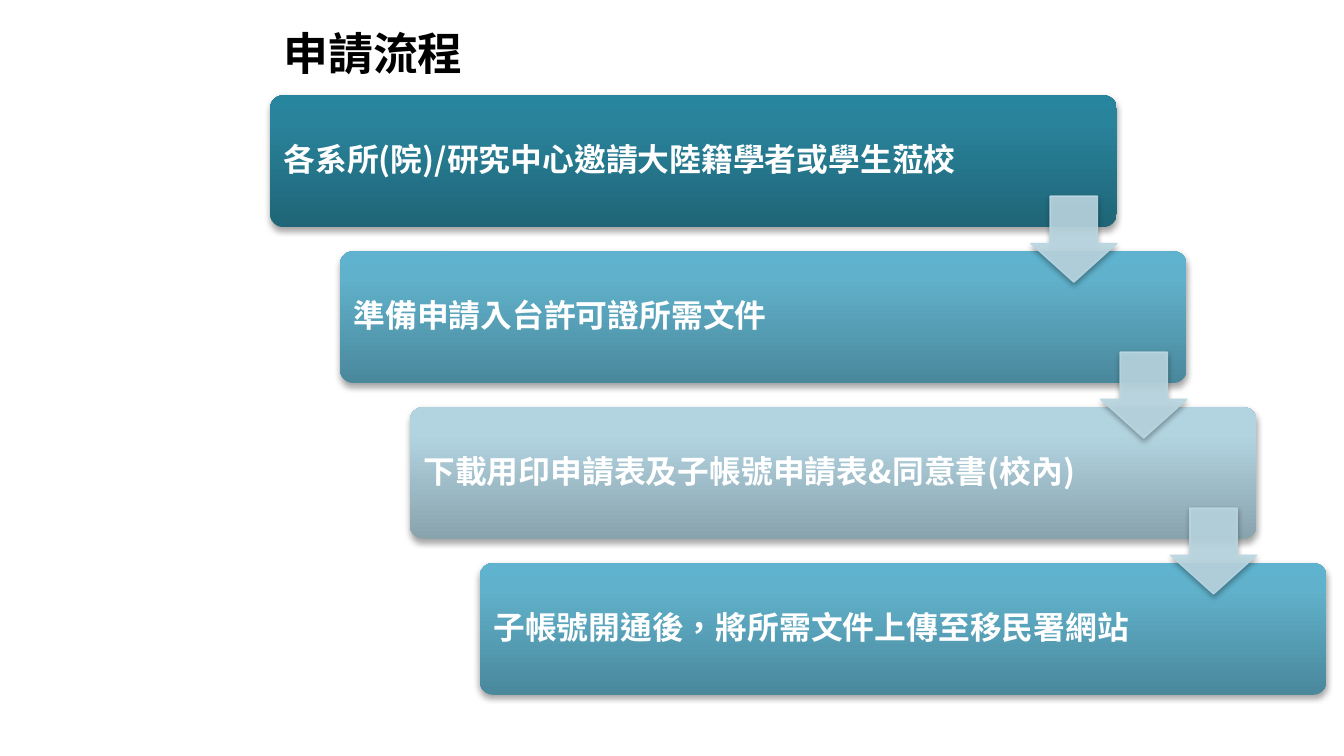
from dataclasses import dataclass

from lxml.etree import SubElement
from pptx import Presentation
from pptx.dml.color import RGBColor
from pptx.enum.lang import MSO_LANGUAGE_ID
from pptx.enum.shapes import MSO_SHAPE
from pptx.enum.text import MSO_ANCHOR, MSO_AUTO_SIZE, PP_ALIGN
from pptx.oxml import parse_xml
from pptx.oxml.ns import nsdecls, qn
from pptx.shapes.autoshape import Shape
from pptx.slide import Slide
from pptx.text.text import TextFrame
from pptx.util import Inches, Pt


@dataclass(frozen=True)
class Theme:
    font: str = "Noto Sans CJK SC"
    title_size: float = 24
    step_size: float = 17
    title_color: str = "000000"
    step_color: str = "FFFFFF"
    arrow_color: str = "BAD7E2"
    arrow_opacity: int = 90
    shadow_color: str = "000000"
    shadow_opacity: int = 35
    dark: tuple[str, str, str] = ("1F6577", "29839B", "27859E")
    medium: tuple[str, str, str] = ("4A889C", "60B1CB", "5FB3CE")
    light: tuple[str, str, str] = ("89A3AD", "B2D4E1", "B2D5E3")


@dataclass(frozen=True)
class Step:
    text: str
    gradient: tuple[str, str, str]
    text_width: float = 5.08


THEME = Theme()
STEPS = [
    Step("各系所(院)/研究中心邀請大陸籍學者或學生蒞校", THEME.dark, 5.16),
    Step("準備申請入台許可證所需文件", THEME.medium),
    Step("下載用印申請表及子帳號申請表&同意書(校內)", THEME.light),
    Step("子帳號開通後，將所需文件上傳至移民署網站", THEME.medium),
]
GRADIENT_POSITIONS = (0, 80, 100)
SLIDE_WIDTH = 10
SLIDE_HEIGHT = SLIDE_WIDTH * 9 / 16
FIRST_LEFT, FIRST_TOP = 2.01, 0.71
STEP_RIGHT, STEP_DOWN = 0.52, 1.16
CARD_WIDTH, CARD_HEIGHT = 6.3, 0.98
TEXT_INSET, TEXT_MARGIN = 0.03, 0.07
ARROW_SIZE, ARROW_DROP = 0.64, 0.75


def write_text(frame: TextFrame, text: str, size: float, color: str) -> None:
    frame.word_wrap = True
    frame.auto_size = MSO_AUTO_SIZE.NONE
    frame.vertical_anchor = MSO_ANCHOR.MIDDLE
    frame.text = text
    para = frame.paragraphs[0]
    para.alignment = PP_ALIGN.LEFT
    para.font.name = THEME.font
    para.font.size = Pt(size)
    para.font.bold = True
    para.font.color.rgb = RGBColor.from_string(color)
    defaults = para._p.pPr.find(qn("a:defRPr"))
    SubElement(defaults, qn("a:ea"), typeface=THEME.font)
    for span in para.runs:
        span.font.language_id = MSO_LANGUAGE_ID.TRADITIONAL_CHINESE


def add_shadow(shape: Shape) -> None:
    shape.shadow.inherit = False
    effects = shape._element.spPr.find(qn("a:effectLst"))
    effects.append(parse_xml(
        f'<a:outerShdw {nsdecls("a")} blurRad="{Pt(3.1)}" dist="{Pt(1.8)}" '
        f'dir="5400000" rotWithShape="0"><a:srgbClr val="{THEME.shadow_color}">'
        f'<a:alpha val="{THEME.shadow_opacity * 1000}"/></a:srgbClr></a:outerShdw>'
    ))


def fill_gradient(shape: Shape, colors: tuple[str, str, str]) -> None:
    shape.fill.gradient()
    gradient = shape._element.spPr.find(qn("a:gradFill"))
    stops = gradient.find(qn("a:gsLst"))
    for stop in list(stops):
        stops.remove(stop)
    for position, color in zip(GRADIENT_POSITIONS, colors):
        stop = SubElement(stops, qn("a:gs"), pos=str(position * 1000))
        SubElement(stop, qn("a:srgbClr"), val=color)
    gradient.find(qn("a:lin")).set("ang", "16200000")


def add_card(page: Slide, step: Step, left: float, top: float) -> None:
    card = page.shapes.add_shape(
        MSO_SHAPE.ROUNDED_RECTANGLE,
        Inches(left), Inches(top), Inches(CARD_WIDTH), Inches(CARD_HEIGHT),
    )
    card.adjustments[0] = 0.1
    fill_gradient(card, step.gradient)
    card.line.fill.background()
    add_shadow(card)

    box = page.shapes.add_textbox(
        Inches(left + TEXT_INSET), Inches(top + TEXT_INSET),
        Inches(step.text_width), Inches(CARD_HEIGHT - 2 * TEXT_INSET),
    )
    frame = box.text_frame
    frame.margin_left = frame.margin_right = Inches(TEXT_MARGIN)
    frame.margin_top = frame.margin_bottom = Inches(TEXT_MARGIN)
    write_text(frame, step.text, THEME.step_size, THEME.step_color)
    frame.paragraphs[0].line_spacing = 0.9


def add_arrow(page: Slide, left: float, top: float) -> None:
    arrow = page.shapes.add_shape(
        MSO_SHAPE.DOWN_ARROW,
        Inches(left), Inches(top), Inches(ARROW_SIZE), Inches(ARROW_SIZE),
    )
    arrow.adjustments[0] = 0.55
    arrow.adjustments[1] = 0.45
    arrow.fill.solid()
    arrow.line.width = Pt(0.75)
    for color in (arrow.fill.fore_color, arrow.line.color):
        color.rgb = RGBColor.from_string(THEME.arrow_color)
    for node in list(arrow._element.spPr.iter(qn("a:srgbClr"))):
        SubElement(node, qn("a:alpha"), val=str(THEME.arrow_opacity * 1000))
    add_shadow(arrow)


def main() -> None:
    deck = Presentation()
    deck.slide_width, deck.slide_height = Inches(SLIDE_WIDTH), Inches(SLIDE_HEIGHT)
    page = deck.slides.add_slide(deck.slide_layouts[5])

    title = page.shapes.title
    title.left, title.top = Inches(FIRST_LEFT), Inches(0.14)
    title.width, title.height = Inches(7.95), Inches(0.5)
    write_text(title.text_frame, "申請流程", THEME.title_size, THEME.title_color)

    corners = [
        (FIRST_LEFT + index * STEP_RIGHT, FIRST_TOP + index * STEP_DOWN)
        for index in range(len(STEPS))
    ]
    for step, (left, top) in zip(STEPS, corners):
        add_card(page, step, left, top)
    for left, top in corners[:-1]:
        add_arrow(page, left + CARD_WIDTH - ARROW_SIZE, top + ARROW_DROP)

    deck.save("out.pptx")


if __name__ == "__main__":
    main()
